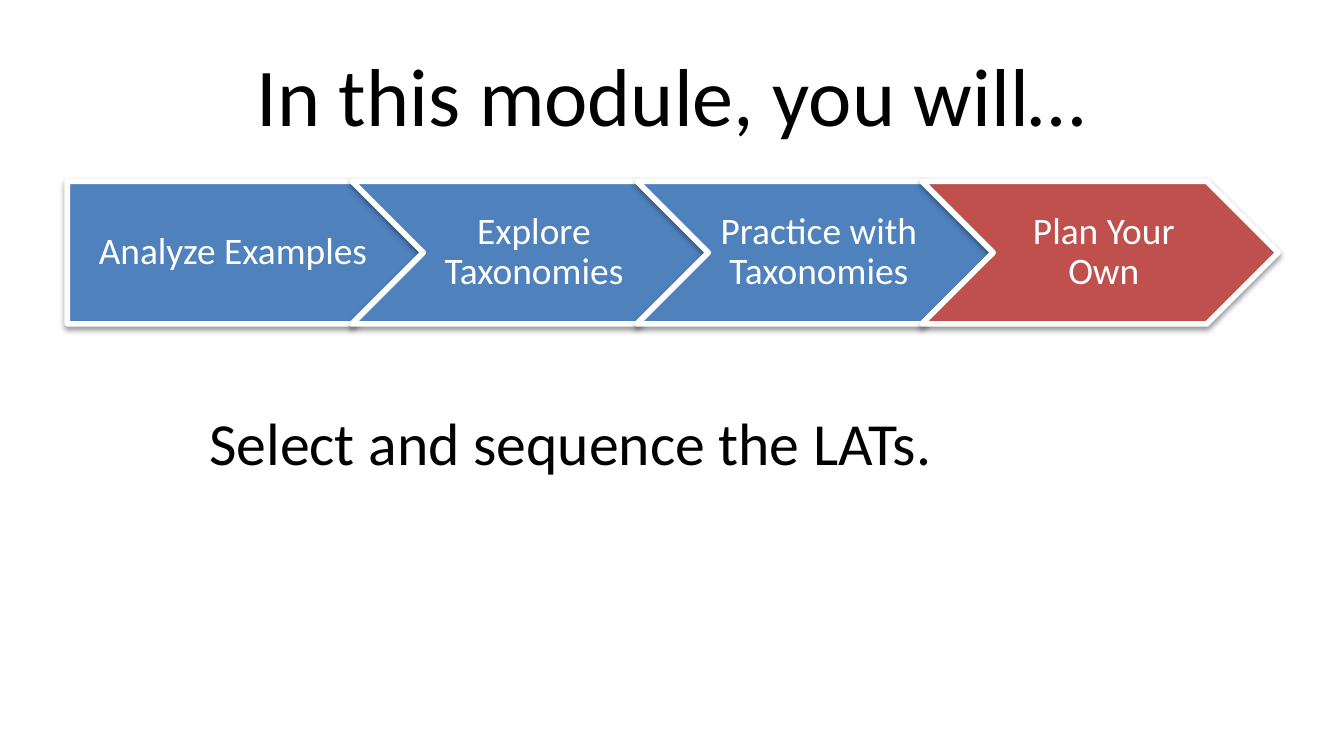
from lxml import etree
from pptx import Presentation
from pptx.dml.color import RGBColor
from pptx.enum.shapes import MSO_SHAPE
from pptx.enum.text import MSO_ANCHOR, PP_ALIGN
from pptx.oxml.ns import qn
from pptx.util import Pt

PLATE, CHEVRON = MSO_SHAPE.PENTAGON, MSO_SHAPE.CHEVRON
TOP, MIDDLE = MSO_ANCHOR.TOP, MSO_ANCHOR.MIDDLE
LEFT, CENTER = PP_ALIGN.LEFT, PP_ALIGN.CENTER
BLACK, WHITE, BLUE, RED = "000000", "FFFFFF", "4F81BD", "C0504D"
STEPS = [
    ("Analyze Examples", BLUE),
    ("Explore Taxonomies", BLUE),
    ("Practice with Taxonomies", BLUE),
    ("Plan Your Own", RED),
]
START, Y, WIDTH, HEIGHT = 36, 97.2, 190.8, 76.32
PITCH = WIDTH * 0.8


def color(code):
    """Turn a hex string into a colour."""
    return RGBColor.from_string(code)


def add_text(slide, text, box, size, code=BLACK, align=CENTER, anchor=MIDDLE,
             inset=(7.2, 3.6, 7.2, 3.6)):
    """Add a wrapped text box and return its paragraph."""
    frame = slide.shapes.add_textbox(*map(Pt, box)).text_frame
    frame.word_wrap = True
    frame.vertical_anchor = anchor
    (frame.margin_left, frame.margin_top,
     frame.margin_right, frame.margin_bottom) = map(Pt, inset)
    frame.text = text
    para = frame.paragraphs[0]
    para.alignment = align
    font = para.runs[0].font
    font.name, font.size = "Calibri", Pt(size)
    font.color.rgb = color(code)
    return para


def add_shadow(shape):
    """Give a shape a soft shadow straight below it."""
    shape.shadow.inherit = False
    effects = shape.element.spPr.find(qn("a:effectLst"))
    outer = etree.SubElement(
        effects, qn("a:outerShdw"), blurRad=str(Pt(3.1)),
        dist=str(Pt(1.6)), dir="5400000", rotWithShape="0")
    tint = etree.SubElement(outer, qn("a:srgbClr"), val=BLACK)
    etree.SubElement(tint, qn("a:alpha"), val="38000")


def add_step(slide, index, label, fill):
    """Add one arrow of the process with its label."""
    left = START + index * PITCH
    kind = CHEVRON if index else PLATE
    shape = slide.shapes.add_shape(
        kind, Pt(left), Pt(Y), Pt(WIDTH), Pt(HEIGHT))
    shape.fill.solid()
    shape.fill.fore_color.rgb = color(fill)
    shape.line.color.rgb = color(WHITE)
    shape.line.width = Pt(3)
    add_shadow(shape)
    point = HEIGHT / 2
    if index:
        box = (left + point, Y, WIDTH - 2 * point, HEIGHT)
        inset = (6, 4, 2, 4)
    else:
        box = (left, Y, WIDTH - point / 2, HEIGHT)
        inset = (8, 4, 2, 4)
    para = add_text(slide, label, box, 20, WHITE, inset=inset)
    para.line_spacing = 0.9


def main():
    """Build the slide and save it."""
    deck = Presentation()
    deck.slide_width, deck.slide_height = Pt(720), Pt(405)
    slide = deck.slides.add_slide(deck.slide_layouts[6])
    add_text(slide, "In this module, you will…", (36, 16.2, 648, 67.5), 44)
    for index, (label, fill) in enumerate(STEPS):
        add_step(slide, index, label, fill)
    add_text(slide, "Select and sequence the LATs.", (105, 214, 522, 46), 32,
             align=LEFT, anchor=TOP)
    deck.save("out.pptx")


if __name__ == "__main__":
    main()
